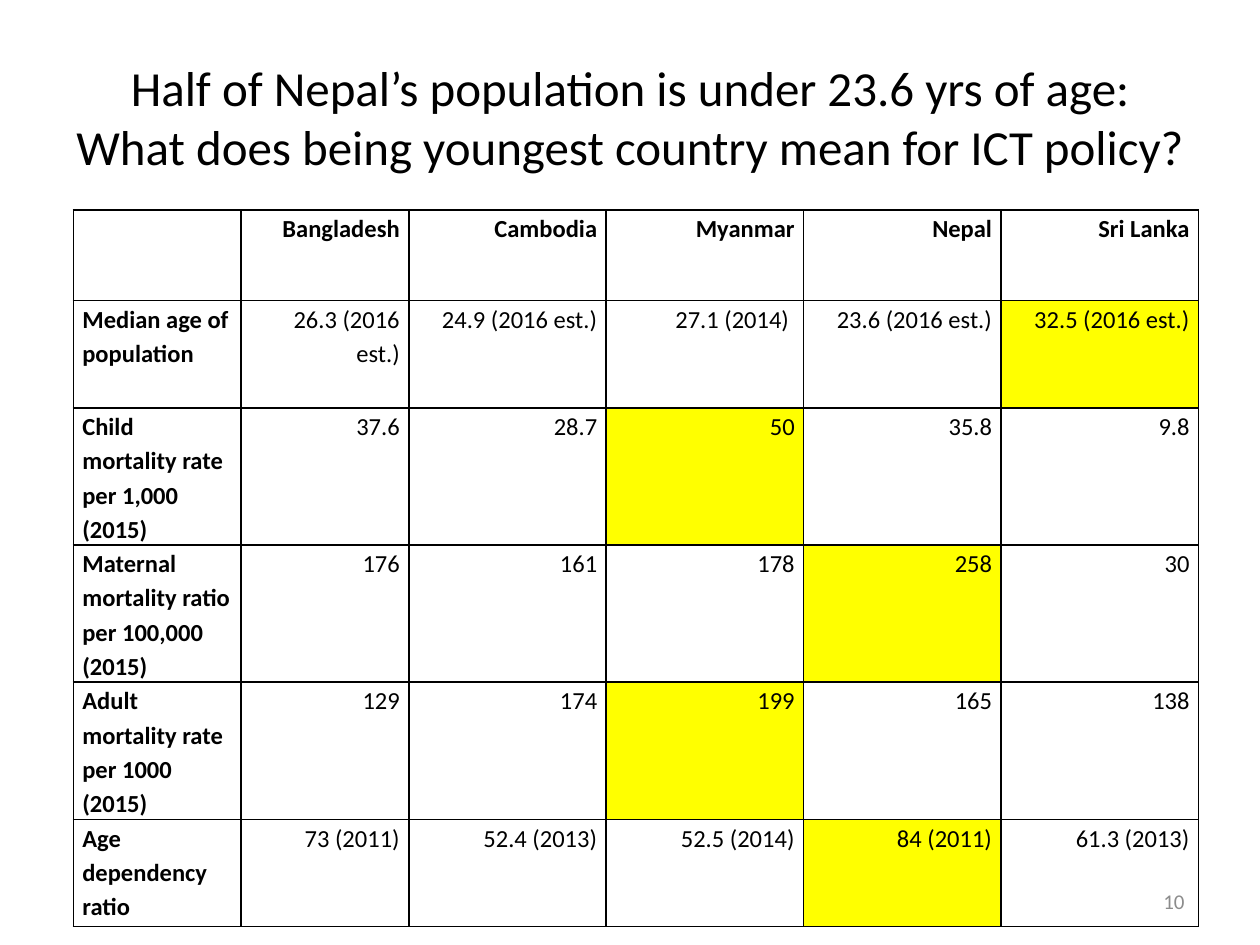
from dataclasses import dataclass

from lxml import etree
from pptx import Presentation
from pptx.dml.color import RGBColor
from pptx.enum.text import MSO_ANCHOR, PP_ALIGN
from pptx.oxml.ns import qn
from pptx.util import Cm, Pt

LEFT, CENTER, RIGHT = PP_ALIGN.LEFT, PP_ALIGN.CENTER, PP_ALIGN.RIGHT
MIDDLE, TOP = MSO_ANCHOR.MIDDLE, MSO_ANCHOR.TOP
TITLE_ONLY = 5


@dataclass(frozen=True)
class Theme:
    font: str = "Calibri"
    ink: str = "000000"
    muted: str = "8C8C8C"
    highlight: str = "FFFF00"
    title_size: int = 28
    table_size: int = 14
    number_size: int = 12
    border_width: int = 1


THEME = Theme()

TITLE = ("Half of Nepal’s population is under 23.6 yrs of age: "
         "What does being youngest country mean for ICT policy?")
INDICATORS = [
    ["", "Bangladesh", "Cambodia", "Myanmar", "Nepal", "Sri Lanka"],
    ["Median age of population", "26.3 (2016 est.)", "24.9 (2016 est.)",
     "27.1 (2014) ", "23.6 (2016 est.)", "32.5 (2016 est.)"],
    ["Child mortality rate per 1,000 (2015)", "37.6", "28.7", "50", "35.8", "9.8"],
    ["Maternal mortality ratio per 100,000 (2015)", "176", "161", "178", "258", "30"],
    ["Adult mortality rate per 1000 (2015)", "129", "174", "199", "165", "138"],
    ["Age dependency ratio", "73 (2011)", "52.4 (2013)", "52.5 (2014)",
     "84 (2011)", "61.3 (2013)"],
]
HIGHLIGHTED = {(1, 5), (2, 3), (3, 4), (4, 3), (5, 4)}
COLUMN_WIDTHS = [3.38] * 2 + [3.98] * 4
ROW_HEIGHTS = [1.83, 2.16, 2.16, 2.39, 2.16, 2.16]


def write(frame, text, size, color=THEME.ink, bold=False, align=LEFT,
          line_spacing=None, space=None):
    para = frame.paragraphs[0]
    para.alignment = align
    if line_spacing:
        para.line_spacing = line_spacing
    if space:
        para.space_after = Pt(space)
    span = para.add_run()
    span.text = text
    span.font.name = THEME.font
    span.font.size = Pt(size)
    span.font.bold = bold
    span.font.color.rgb = RGBColor.from_string(color)


def place(shape, box):
    shape.left, shape.top, shape.width, shape.height = (Cm(length) for length in box)


def add_title(page, box):
    title = page.shapes.title
    place(title, box)
    title.text_frame.word_wrap = True
    title.text_frame.vertical_anchor = MIDDLE
    write(title.text_frame, TITLE, THEME.title_size, align=CENTER)


def draw_borders(cell):
    properties = cell._tc.get_or_add_tcPr()
    for position, side in enumerate(("a:lnL", "a:lnR", "a:lnT", "a:lnB")):
        line = etree.Element(qn(side), w=str(Pt(THEME.border_width)))
        fill = etree.SubElement(line, qn("a:solidFill"))
        etree.SubElement(fill, qn("a:srgbClr"), val=THEME.ink)
        properties.insert(position, line)


def format_cell(cell, highlighted):
    cell.margin_left = cell.margin_right = Cm(0.18)
    cell.margin_top = cell.margin_bottom = Cm(0)
    cell.vertical_anchor = TOP
    if highlighted:
        cell.fill.solid()
        cell.fill.fore_color.rgb = RGBColor.from_string(THEME.highlight)
    else:
        cell.fill.background()
    draw_borders(cell)


def add_indicator_table(page, box):
    lengths = [Cm(length) for length in box]
    table = page.shapes.add_table(
        len(INDICATORS), len(COLUMN_WIDTHS), *lengths).table
    table.first_row = table.horz_banding = False
    for column, width in zip(table.columns, COLUMN_WIDTHS):
        column.width = Cm(width)
    for row, height in zip(table.rows, ROW_HEIGHTS):
        row.height = Cm(height)
    for r, values in enumerate(INDICATORS):
        for c, value in enumerate(values):
            cell = table.cell(r, c)
            format_cell(cell, (r, c) in HIGHLIGHTED)
            if value:
                write(cell.text_frame, value, THEME.table_size,
                      bold=r == 0 or c == 0, align=RIGHT if c else LEFT,
                      line_spacing=1.15, space=1)


def add_page_number(page, box):
    number = page.shapes.add_textbox(*(Cm(length) for length in box))
    number.text_frame.word_wrap = True
    number.text_frame.vertical_anchor = MIDDLE
    write(number.text_frame, "10", THEME.number_size, color=THEME.muted, align=RIGHT)


def main():
    deck = Presentation()
    deck.slide_width, deck.slide_height = Cm(25.4), Cm(19.05)
    page = deck.slides.add_slide(deck.slide_layouts[TITLE_ONLY])
    add_title(page, (1.27, 0.76, 22.86, 3.18))
    add_indicator_table(page, (1.48, 4.23, sum(COLUMN_WIDTHS), sum(ROW_HEIGHTS)))
    add_page_number(page, (18.2, 17.66, 5.93, 1.01))
    deck.save("out.pptx")


if __name__ == "__main__":
    main()
